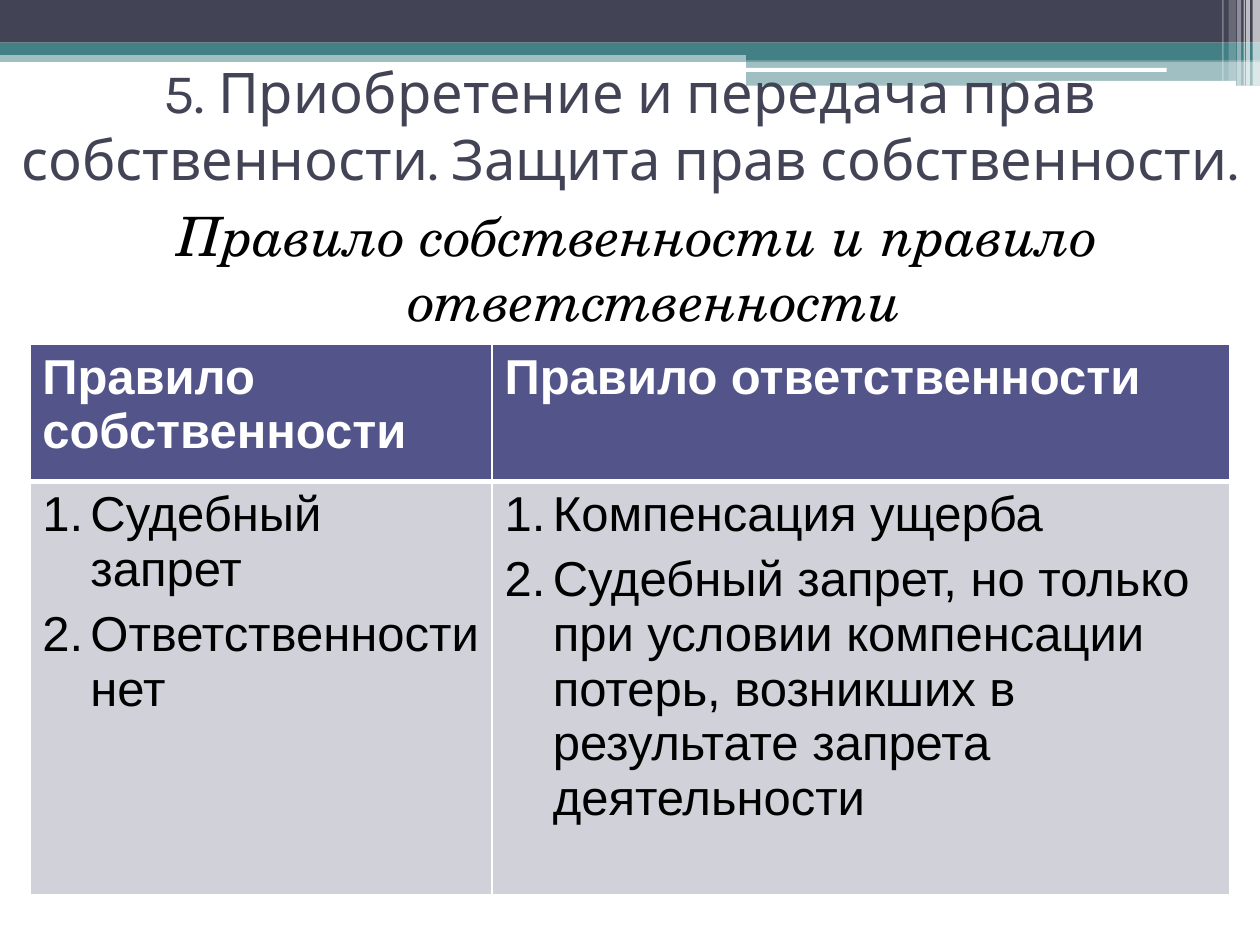
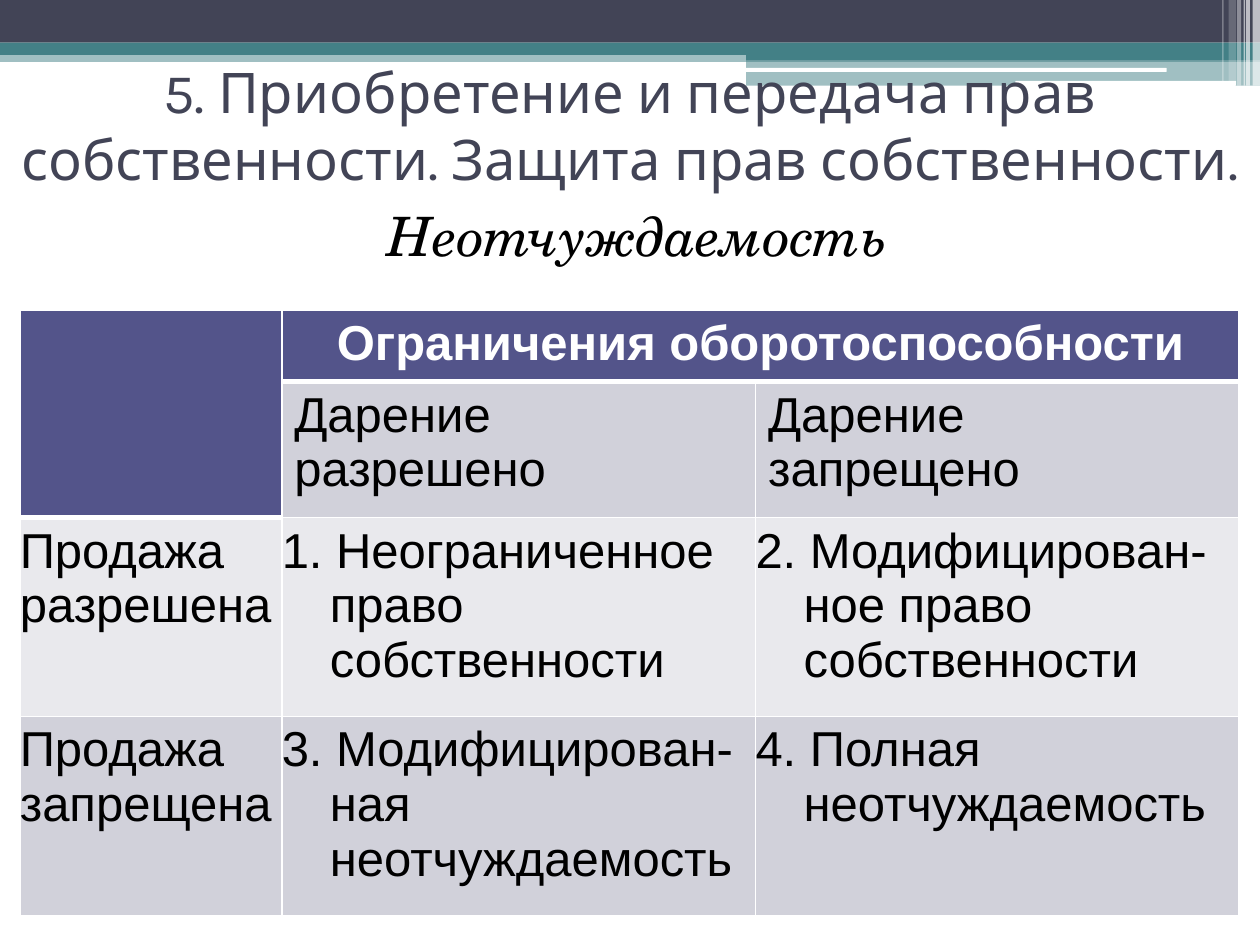
import pptx
import pptx.util
from pptx.dml.color import RGBColor
from pptx.enum.shapes import MSO_SHAPE
from pptx.enum.text import MSO_ANCHOR, MSO_AUTO_SIZE, PP_ALIGN
from pptx.oxml.ns import qn
from lxml import etree

Cm, Pt = pptx.util.Cm, pptx.util.Pt

# ---- Content ----
TITLE = "5. Приобретение и передача прав собственности. Защита прав собственности."

# header_depth: number of header rows in each column
# merges: first and last (row, column) of each merged area
# numbered: cell lists get automatic numbers; flush_from: first row without side margins
SLIDES = [
    {
        "subtitle": "Правило собственности и правило ответственности",
        "left_top": (0.6, 6.93),
        "columns": [9.32, 14.88],
        "rows": [2.77, 8.33],
        "header_depth": [1, 1],
        "merges": [],
        "numbered": True,
        "flush_from": 2,
        "header_align": PP_ALIGN.LEFT,
        "cells": [
            [["Правило собственности"], ["Правило ответственности"]],
            [["Судебный запрет", "Ответственности нет"],
             ["Компенсация ущерба",
              "Судебный запрет, но только при условии компенсации потерь, "
              "возникших в результате запрета деятельности"]],
        ],
    },
    {
        "subtitle": "Неотчуждаемость",
        "left_top": (0.4, 6.25),
        "columns": [5.28, 9.55, 9.75],
        "rows": [1.35, 2.74, 4.01, 4.01],
        "header_depth": [2, 1, 1],
        "merges": [((0, 0), (1, 0)), ((0, 1), (0, 2))],
        "numbered": False,
        "flush_from": 2,
        "header_align": PP_ALIGN.CENTER,
        "cells": [
            [[], ["Ограничения оборотоспособности"], []],
            [[], ["Дарение разрешено"], ["Дарение запрещено"]],
            [["Продажа разрешена"],
             ["1. Неограниченное право собственности"],
             ["2. Модифицирован-ное право собственности"]],
            [["Продажа запрещена"],
             ["3. Модифицирован-ная неотчуждаемость"],
             ["4. Полная неотчуждаемость"]],
        ],
    },
]

# ---- Shared style ----
COLORS = {
    "dark": "424456", "teal": "438086", "white": "FFFFFF", "black": "000000",
    "header": "53548A", "odd_row": "D1D1DA", "even_row": "E9E9ED",
}
FONTS = {
    "title": {"name": "Karla", "size": Pt(32)},
    "subtitle": {"name": "TeX Gyre Schola", "size": Pt(31), "italic": True},
    "header": {"name": "Arial", "size": Pt(28), "bold": True},
    "cell": {"name": "Arial", "size": Pt(28), "bold": False},
}
WIDTH, HEIGHT = 25.4, 19.05
TITLE_TOP, SUBTITLE_TOP = 1.02, 3.96
HANGING = 0.97

# left, top, width, height in cm, colour, opacity in percent
BANDS = [
    (0, 1.02, WIDTH, 0.23, "teal", 50),
    (0, 0, WIDTH, 0.86, "dark", 100),
    (0, 0.86, WIDTH, 0.25, "teal", 100),
    (15.04, 0.99, 10.36, 0.23, "teal", 100),
    (15.04, 1.22, 10.36, 0.51, "teal", 50),
]
ROUNDED_LINES = [
    (15.01, 1.37, 8.51, 0.08, "white", 100),
    (20.47, 1.63, 4.45, 0.1, "white", 100),
]
# left, width, height in cm, opacity
STRIPES = [
    (25.25, 0.15, 1.73, 65), (25.12, 0.08, 1.73, 65), (25.07, 0.03, 1.73, 60),
    (24.94, 0.08, 1.73, 40), (24.77, 0.15, 1.63, 20), (24.64, 0.03, 1.63, 30),
]


def rgb(color):
    return RGBColor.from_string(COLORS[color])


def write(paragraph, text, style, color, align):
    paragraph.text = text
    paragraph.alignment = align
    font = paragraph.runs[0].font
    for attribute, value in FONTS[style].items():
        setattr(font, attribute, value)
    font.color.rgb = rgb(color)


def hang(paragraph, left, first):
    properties = paragraph._p.get_or_add_pPr()
    properties.set("marL", str(Cm(left)))
    properties.set("indent", str(Cm(first)))
    return properties


def add_band(slide, preset, left, top, width, height, color, opacity):
    band = slide.shapes.add_shape(preset, Cm(left), Cm(top), Cm(width), Cm(height))
    band.shadow.inherit = False
    band.fill.solid()
    band.fill.fore_color.rgb = rgb(color)
    band.line.fill.background()
    if opacity < 100:
        tint = band.element.find(".//" + qn("a:srgbClr"))
        etree.SubElement(tint, qn("a:alpha"), val=str(opacity * 1000))


def add_decoration(slide):
    for band in BANDS:
        add_band(slide, MSO_SHAPE.RECTANGLE, *band)
    for line in ROUNDED_LINES:
        add_band(slide, MSO_SHAPE.ROUNDED_RECTANGLE, *line)
    for left, width, height, opacity in STRIPES:
        add_band(slide, MSO_SHAPE.RECTANGLE, left, 0, width, height, "white", opacity)


def add_subtitle(slide, text):
    subtitle = slide.shapes.add_textbox(
        0, Cm(SUBTITLE_TOP), Cm(WIDTH), Cm(HEIGHT - SUBTITLE_TOP))
    subtitle.text_frame.word_wrap = True
    paragraph = subtitle.text_frame.paragraphs[0]
    write(paragraph, text, "subtitle", "black", PP_ALIGN.CENTER)
    hang(paragraph, 1.02, -0.71)
    paragraph.space_before = Pt(12)


def place_title(slide):
    title = slide.shapes.title
    title.left, title.top = Cm(0), Cm(TITLE_TOP)
    title.width, title.height = Cm(WIDTH), Cm(2.97)
    frame = title.text_frame
    frame.word_wrap = True
    frame.auto_size = MSO_AUTO_SIZE.NONE
    frame.vertical_anchor = MSO_ANCHOR.MIDDLE
    write(frame.paragraphs[0], TITLE, "title", "dark", PP_ALIGN.CENTER)
    # Bring the title in front of the bands
    title.element.getparent().append(title.element)


def set_borders(cell, top, bottom):
    properties = cell._tc.get_or_add_tcPr()
    sides = {"a:lnL": 1, "a:lnR": 1, "a:lnT": top, "a:lnB": bottom}
    for position, (side, points) in enumerate(sides.items()):
        border = etree.Element(qn(side), w=str(Pt(points)))
        fill = etree.SubElement(border, qn("a:solidFill"))
        etree.SubElement(fill, qn("a:srgbClr"), val=COLORS["white"])
        properties.insert(position, border)


def fill_cell(cell, row, column, lines, content):
    depth = content["header_depth"][column]
    is_header = row < depth
    flush = row >= content["flush_from"]
    cell.fill.solid()
    cell.fill.fore_color.rgb = rgb(
        "header" if is_header else "odd_row" if row % 2 else "even_row")
    set_borders(cell, 3 if row == depth else 1, 3 if row == depth - 1 else 1)
    if flush:
        cell.margin_left = cell.margin_right = 0

    for index, text in enumerate(lines):
        frame = cell.text_frame
        paragraph = frame.add_paragraph() if index else frame.paragraphs[0]
        if is_header:
            write(paragraph, text, "header", "white", content["header_align"])
            continue
        write(paragraph, text, "cell", "black", PP_ALIGN.LEFT)
        if content["numbered"] or flush:
            paragraph.space_before = Pt(6)
        if content["numbered"] or (flush and column):
            properties = hang(paragraph, HANGING, -HANGING)
            if content["numbered"]:
                etree.SubElement(properties, qn("a:buFont"), typeface="+mj-lt")
                etree.SubElement(properties, qn("a:buAutoNum"), type="arabicPeriod")


def add_rules_table(slide, content):
    columns, rows = content["columns"], content["rows"]
    left, top = content["left_top"]
    table = slide.shapes.add_table(
        len(rows), len(columns), Cm(left), Cm(top), Cm(sum(columns)), Cm(sum(rows))).table
    table.first_row = table.horz_banding = False
    for column, width in zip(table.columns, columns):
        column.width = Cm(width)
    for row, height in zip(table.rows, rows):
        row.height = Cm(height)
    for first, last in content["merges"]:
        table.cell(*first).merge(table.cell(*last))
    for row, line in enumerate(content["cells"]):
        for column, lines in enumerate(line):
            fill_cell(table.cell(row, column), row, column, lines, content)


def main():
    deck = pptx.Presentation()
    deck.slide_width, deck.slide_height = Cm(WIDTH), Cm(HEIGHT)
    title_only = deck.slide_layouts[5]
    for content in SLIDES:
        slide = deck.slides.add_slide(title_only)
        add_decoration(slide)
        add_subtitle(slide, content["subtitle"])
        add_rules_table(slide, content)
        place_title(slide)
    deck.save("out.pptx")


if __name__ == "__main__":
    main()
